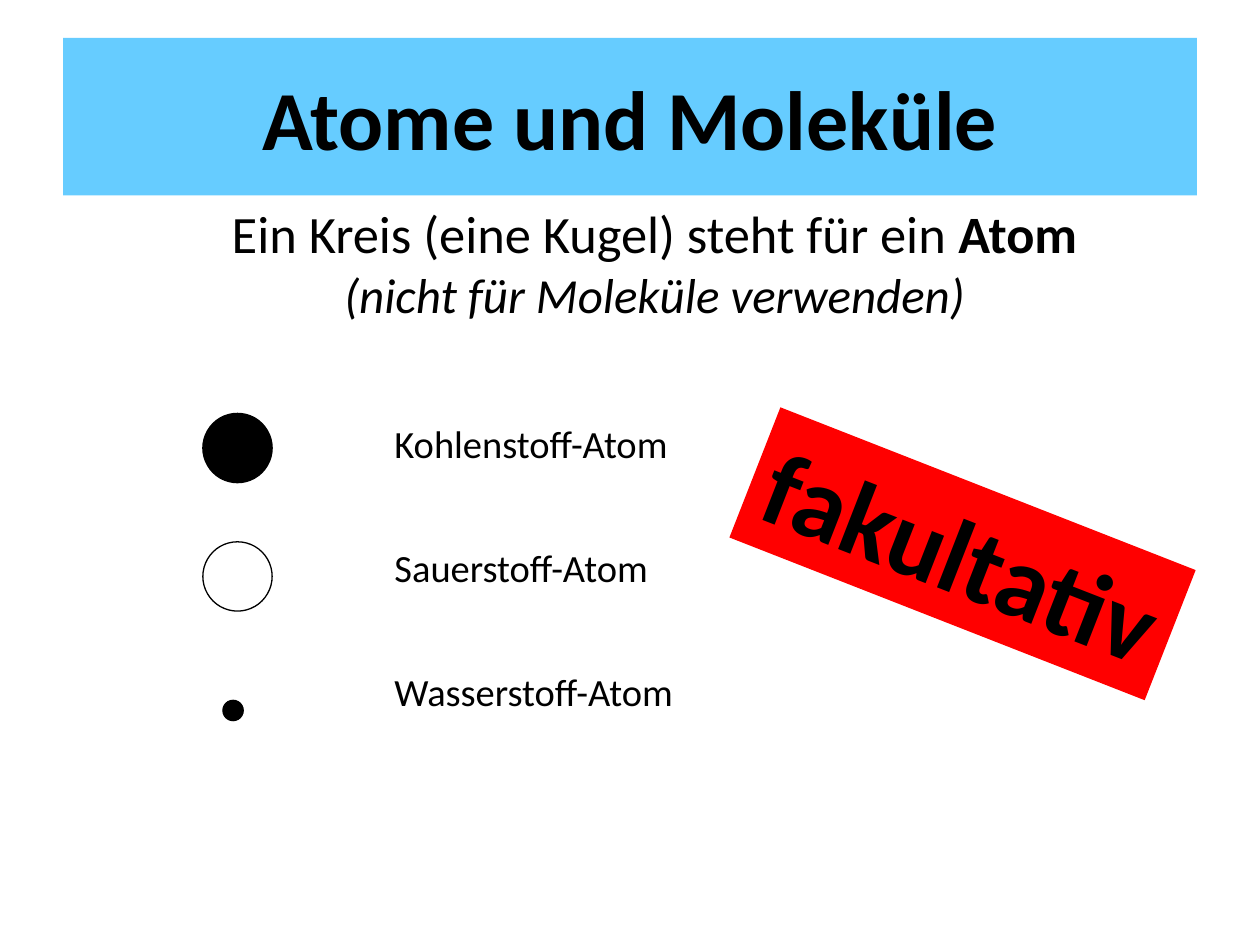
import pptx
import pptx.util
import pptx.dml.color
import pptx.enum.shapes
import pptx.enum.text
import pptx.oxml.xmlchemy

Pt = pptx.util.Pt
ALIGN = pptx.enum.text.PP_ALIGN
SHAPE = pptx.enum.shapes.MSO_SHAPE

THEME = {
    "font": "Calibri",
    "ink": "000000", "paper": "FFFFFF", "band": "66CCFF", "stamp": "FF0000",
    "size": {"title": 48, "lead": 30, "note": 28, "label": 22, "stamp": 60},
}

TITLE = [[("Atome und Moleküle", "title", {"bold": True})]]
INTRO = [
    [("Ein Kreis (eine Kugel) steht für ein ", "lead", {}),
     ("Atom", "lead", {"bold": True})],
    [("(nicht für Moleküle verwenden)", "note", {"italic": True})],
]
STAMP = [[("fakultativ", "stamp", {"bold": True})]]
# label, fill, centre x, centre y, diameter
ATOMS = [
    ("Kohlenstoff-Atom", "ink", 135.7, 256, 39.6),
    ("Sauerstoff-Atom", "paper", 135.7, 329.4, 39.6),
    ("Wasserstoff-Atom", "ink", 133.2, 406, 11.6),
]
LABEL_GAP = 44.6

BOX = {
    "title": (36, 21.6, 648, 90),
    "intro": (87.8, 111.6, 572.4, 99.4),
    "labels": (218.2, 236.2, 419.8, 216),
    "stamp": (422.6, 276.5, 254.9, 79.9),
}
TILT = 21.4


def color(name):
    return pptx.dml.color.RGBColor.from_string(THEME[name])


def place(shape, box):
    for name, value in zip(("left", "top", "width", "height"), box):
        setattr(shape, name, Pt(value))


def paint(shape, fill):
    shape.fill.solid()
    shape.fill.fore_color.rgb = color(fill)


def write(shape, paras, align, anchor="TOP", gap=0):
    """Fill a shape with paragraphs of (text, size name, format) runs."""
    frame = shape.text_frame
    frame.word_wrap = True
    frame.auto_size = pptx.enum.text.MSO_AUTO_SIZE.NONE
    frame.vertical_anchor = pptx.enum.text.MSO_ANCHOR[anchor]
    for i, runs in enumerate(paras):
        para = frame.add_paragraph() if i else frame.paragraphs[0]
        para.alignment = align
        para.space_before = Pt(gap if i else 0)
        for text, size, extra in runs:
            run = para.add_run()
            run.text = text
            form = {"name": THEME["font"], "size": Pt(THEME["size"][size]),
                    "bold": False, "italic": False, **extra}
            for name, value in form.items():
                setattr(run.font, name, value)
            run.font.color.rgb = color("ink")


def unbullet(para):
    props = para._p.get_or_add_pPr()
    props.set("marL", "0")
    props.set("indent", "0")
    props.append(pptx.oxml.xmlchemy.OxmlElement("a:buNone"))


def add_atom(slide, fill, x, y, size):
    half = size / 2
    atom = slide.shapes.add_shape(
        SHAPE.OVAL, Pt(x - half), Pt(y - half), Pt(size), Pt(size))
    atom.shadow.inherit = False
    paint(atom, fill)
    atom.line.color.rgb = color("ink")
    atom.line.width = Pt(0.75)


def main():
    deck = pptx.Presentation()
    deck.slide_width, deck.slide_height = Pt(720), Pt(540)
    slide = deck.slides.add_slide(deck.slide_layouts[1])

    title = slide.shapes.title
    place(title, BOX["title"])
    paint(title, "band")
    write(title, TITLE, ALIGN.CENTER, "MIDDLE")

    intro = slide.shapes.add_textbox(*map(Pt, BOX["intro"]))
    write(intro, INTRO, ALIGN.CENTER)

    for _, *atom in ATOMS:
        add_atom(slide, *atom)

    labels = slide.placeholders[1]
    place(labels, BOX["labels"])
    write(labels, [[(atom[0], "label", {})] for atom in ATOMS],
          ALIGN.LEFT, gap=LABEL_GAP)
    for para in labels.text_frame.paragraphs:
        unbullet(para)

    stamp = slide.shapes.add_shape(SHAPE.RECTANGLE, *map(Pt, BOX["stamp"]))
    stamp.shadow.inherit = False
    stamp.rotation = TILT
    paint(stamp, "stamp")
    stamp.line.fill.background()
    write(stamp, STAMP, ALIGN.CENTER)

    deck.save("out.pptx")


if __name__ == "__main__":
    main()
